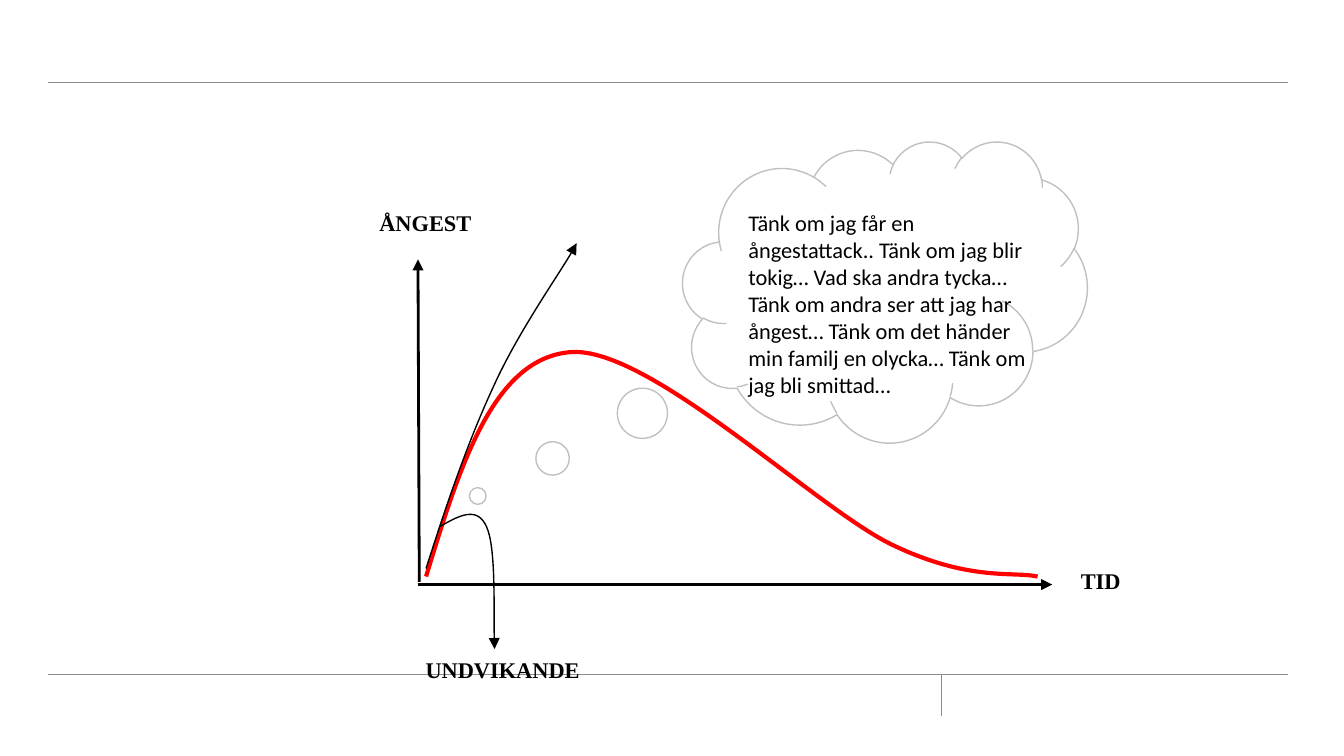
from typing import NamedTuple

from lxml.etree import SubElement
from pptx import Presentation
from pptx.dml.color import RGBColor
from pptx.enum.shapes import MSO_CONNECTOR, MSO_SHAPE
from pptx.enum.text import PP_ALIGN
from pptx.oxml.ns import qn
from pptx.util import Inches, Pt

BLACK = RGBColor(0x00, 0x00, 0x00)
RED = RGBColor(0xFF, 0x00, 0x00)
SILVER = RGBColor(0xC0, 0xC0, 0xC0)
RULE_GREY = RGBColor(0x8B, 0x8D, 0x8E)


class Line(NamedTuple):
    start: tuple[float, float]
    end: tuple[float, float]
    color: RGBColor
    weight: float
    arrow: bool = False


class Curve(NamedTuple):
    """A start point followed by three points for each Bézier segment."""
    points: list[tuple[float, float]]
    color: RGBColor
    weight: float
    arrow: bool = False


class Label(NamedTuple):
    text: str
    box: tuple[float, float, float, float]
    font: str = "Times New Roman"
    bold: bool = True
    align: PP_ALIGN = PP_ALIGN.CENTER


RULES = [
    Line((0.36, 0.61), (9.58, 0.61), RULE_GREY, 0.25),
    Line((0.36, 5.02), (9.58, 5.02), RULE_GREY, 0.25),
    Line((7, 5.02), (7, 5.33), RULE_GREY, 0.25),
]
ANXIETY_AXIS = Line((3.12, 4.33), (3.11, 1.93), BLACK, 1.5, True)
TIME_AXIS = Line((3.11, 4.35), (7.83, 4.35), BLACK, 1.5, True)

ANXIETY_CURVE = Curve(
    [(3.17, 4.29), (3.42, 3.47), (3.67, 2.66), (4.25, 2.62), (4.83, 2.58),
     (6.06, 3.77), (6.63, 4.05), (7.21, 4.33), (7.54, 4.25), (7.72, 4.29)],
    RED, 2.25)
AVOIDANCE_CURVE = Curve(
    [(3.27, 3.92), (3.41, 3.84), (3.55, 3.76), (3.62, 3.92),
     (3.69, 4.07), (3.67, 4.64), (3.68, 4.83)],
    BLACK, 0.75, True)
ESCALATION_CURVE = Curve(
    [(3.17, 4.23), (3.32, 3.76), (3.48, 3.29), (3.67, 2.88),
     (3.85, 2.48), (4.23, 1.94), (4.29, 1.81)],
    BLACK, 0.75, True)

AXIS_LABELS = [
    Label("TID", (7.83, 4.17, 0.72, 0.18)),
    Label("ÅNGEST", (2.64, 1.51, 1.05, 0.39)),
    Label("UNDVIKANDE ", (3.05, 4.83, 1.38, 0.31)),
]
WORRIES = Label(
    "Tänk om jag får en ångestattack.. Tänk om jag blir tokig… "
    "Vad ska andra tycka… Tänk om andra ser att jag har ångest… "
    "Tänk om det händer min familj en olycka… Tänk om jag bli smittad…",
    (5.47, 1.51, 2.37, 1.53), "Calibri", False, PP_ALIGN.LEFT)


def style_line(shape, color: RGBColor, weight: float, arrow: bool) -> None:
    shape.line.color.rgb = color
    shape.line.width = Pt(weight)
    if arrow:
        SubElement(shape.line._get_or_add_ln(), qn("a:tailEnd"), type="triangle")


def draw_line(slide, line: Line) -> None:
    ends = [Inches(value) for value in (*line.start, *line.end)]
    connector = slide.shapes.add_connector(MSO_CONNECTOR.STRAIGHT, *ends)
    style_line(connector, line.color, line.weight, line.arrow)
    SubElement(connector._element.spPr, qn("a:effectLst"))


def draw_curve(slide, curve: Curve) -> None:
    start, *rest = [(Inches(x), Inches(y)) for x, y in curve.points]
    builder = slide.shapes.build_freeform(*start)
    builder.add_line_segments(rest, close=False)
    shape = builder.convert_to_shape()
    # Turn every three straight segments into one Bézier segment
    outline = next(shape._element.iter(qn("a:path")))
    segments = outline.findall(qn("a:lnTo"))
    for first in range(0, len(segments), 3):
        bezier = SubElement(outline, qn("a:cubicBezTo"))
        for segment in segments[first:first + 3]:
            bezier.append(segment[0])
            outline.remove(segment)
    shape.fill.background()
    shape.shadow.inherit = False
    style_line(shape, curve.color, curve.weight, curve.arrow)


def draw_label(slide, label: Label) -> None:
    textbox = slide.shapes.add_textbox(*map(Inches, label.box))
    textbox.text_frame.word_wrap = True
    paragraph = textbox.text_frame.paragraphs[0]
    paragraph.text = label.text
    paragraph.alignment = label.align
    paragraph.font.name = label.font
    paragraph.font.size = Pt(12)
    paragraph.font.bold = label.bold
    paragraph.font.color.rgb = BLACK


def draw_thought_cloud(slide) -> None:
    cloud = slide.shapes.add_shape(
        MSO_SHAPE.CLOUD_CALLOUT, *map(Inches, (5.08, 1.05, 3.01, 2.24)))
    cloud.adjustments[0] = -1.007
    cloud.adjustments[1] = 0.679
    cloud.fill.background()
    cloud.shadow.inherit = False
    style_line(cloud, SILVER, 0.75, False)


def main() -> None:
    # Widescreen page, 16:9
    presentation = Presentation()
    presentation.slide_width = Inches(10)
    presentation.slide_height = Inches(10 * 9 / 16)
    slide = presentation.slides.add_slide(presentation.slide_layouts[6])

    # Page rules
    for rule in RULES:
        draw_line(slide, rule)

    # Anxiety over time
    draw_curve(slide, ANXIETY_CURVE)
    for label in AXIS_LABELS:
        draw_label(slide, label)

    # Thought cloud and vertical axis
    draw_thought_cloud(slide)
    draw_line(slide, ANXIETY_AXIS)
    draw_label(slide, WORRIES)

    # Avoidance, escalation and time axis
    draw_curve(slide, AVOIDANCE_CURVE)
    draw_curve(slide, ESCALATION_CURVE)
    draw_line(slide, TIME_AXIS)

    presentation.save("out.pptx")


if __name__ == "__main__":
    main()
